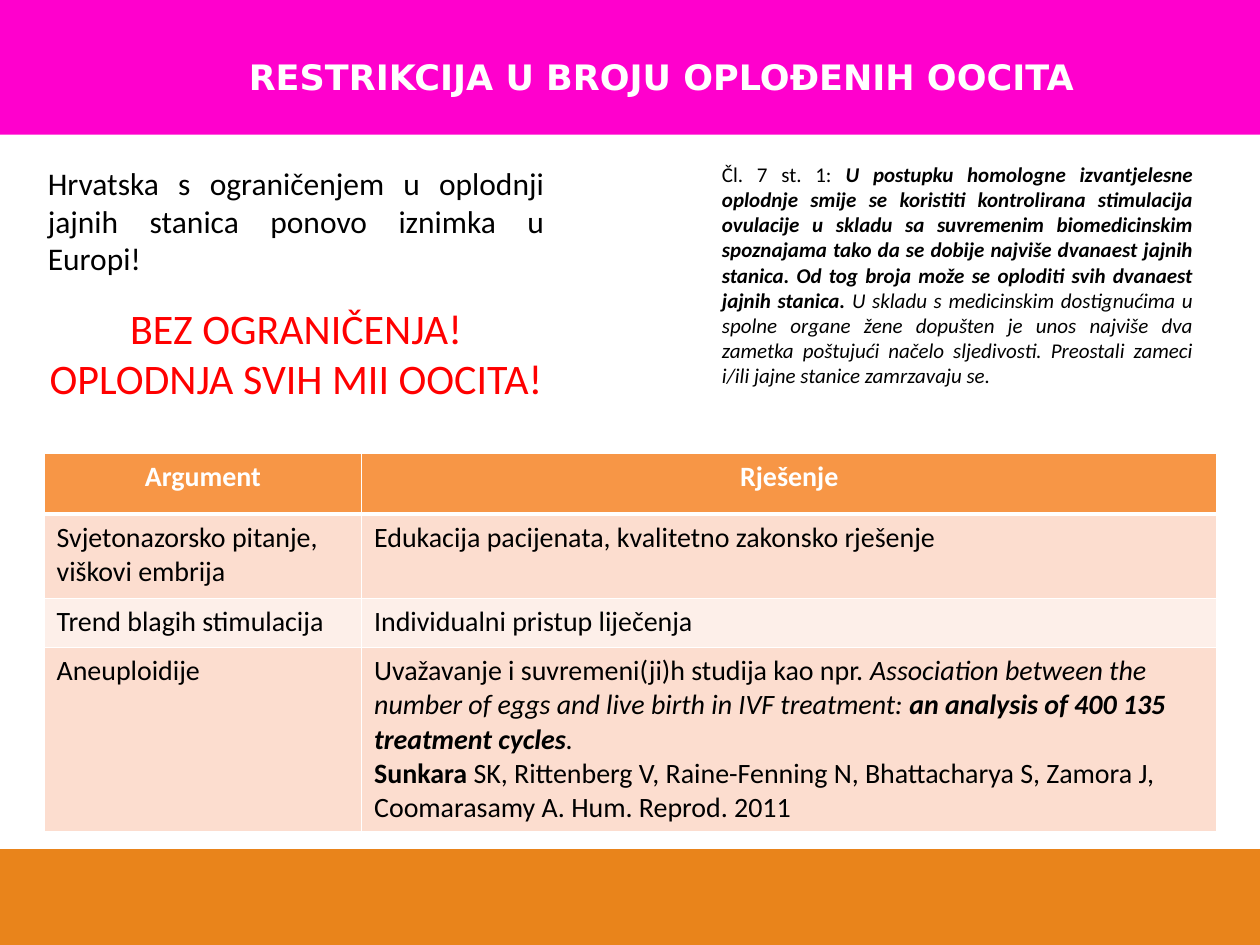
from lxml.etree import SubElement
from pptx import Presentation
from pptx.dml.color import RGBColor as RGB
from pptx.enum.shapes import MSO_SHAPE as SHAPE
from pptx.enum.text import MSO_ANCHOR as ANCHOR, MSO_AUTO_SIZE as FIT, PP_ALIGN as AL
from pptx.oxml import parse_xml
from pptx.oxml.ns import nsdecls, qn
from pptx.util import Inches, Pt

COLORS = {
    "magenta": "FF00CD", "orange": "E9841B", "header": "F79646",
    "odd": "FCDDCF", "even": "FDEFE9",
    "white": "FFFFFF", "black": "000000", "red": "FF0000",
}

prs = Presentation()
prs.slide_width, prs.slide_height = Inches(10), Inches(7.5)
X, Y = prs.slide_width / 100, prs.slide_height / 100
s = prs.slides.add_slide(prs.slide_layouts[3])


def box(left, top, width, height):
    return int(left * X), int(top * Y), int(width * X), int(height * Y)


def write(p, text, size=16, color="black", font="Calibri", bold=False, italic=False):
    r = p.add_run()
    r.text = text
    r.font.size, r.font.name = Pt(size), font
    r.font.bold, r.font.italic = bold, italic
    r.font.color.rgb = RGB.from_string(COLORS[color])


for i, (top, height, color) in enumerate([(0, 14.27, "magenta"), (89.87, 10.13, "orange")]):
    sp = s.shapes.add_shape(SHAPE.RECTANGLE, *box(0, top, 100, height))
    sp.shadow.inherit = False
    sp.fill.solid()
    sp.fill.fore_color.rgb = RGB.from_string(COLORS[color])
    sp.line.fill.background()
    s.shapes._spTree.insert(2 + i, sp._element)

title, left, right = s.placeholders
frames = [
    (title, (7.5, 0.67, 90, 13.33)),
    (left, (2.8, 16.67, 41.4, 35.07)),
    (right, (56.3, 16.4, 39.4, 25.6)),
]
for sp, place in frames:
    sp.left, sp.top, sp.width, sp.height = box(*place)
    sp.text_frame.word_wrap = True
    sp.text_frame.auto_size = FIT.NONE

tf = title.text_frame
tf.vertical_anchor = ANCHOR.MIDDLE
tf.margin_top = int(2.27 * Y)
tf.paragraphs[0].alignment = AL.CENTER
write(tf.paragraphs[0], "RESTRIKCIJA U BROJU OPLOĐENIH OOCITA",
      size=20, color="white", font="DejaVu Sans", bold=True)

bodies = [
    (left, [
        (AL.JUSTIFY, 1, [("Hrvatska s ograničenjem u oplodnji jajnih stanica ponovo iznimka u Europi!",
                          dict(size=18))]),
        (AL.CENTER, 1.5, [("BEZ OGRANIČENJA!", dict(size=24, color="red"))]),
        (AL.CENTER, 1, [("OPLODNJA SVIH MII OOCITA!", dict(size=24, color="red"))]),
    ]),
    (right, [
        (AL.JUSTIFY, 1, [
            ("Čl. 7 st. 1: ", dict(size=12)),
            ("U postupku homologne izvantjelesne oplodnje smije se koristiti kontrolirana "
             "stimulacija ovulacije u skladu sa suvremenim biomedicinskim spoznajama tako da se "
             "dobije najviše dvanaest jajnih stanica. Od tog broja može se oploditi svih dvanaest "
             "jajnih stanica. ", dict(size=12, bold=True, italic=True)),
            ("U skladu s medicinskim dostignućima u spolne organe žene dopušten je unos najviše "
             "dva zametka poštujući načelo sljedivosti. Preostali zameci i/ili jajne stanice "
             "zamrzavaju se.", dict(size=12, italic=True)),
        ]),
    ]),
]
for sp, paragraphs in bodies:
    tf = sp.text_frame
    for i, (align, spacing, runs) in enumerate(paragraphs):
        p = tf.add_paragraph() if i else tf.paragraphs[0]
        p.alignment, p.line_spacing, p.space_before = align, spacing, Pt(0)
        pPr = p._p.get_or_add_pPr()
        pPr.set("marL", "0")
        pPr.set("indent", "0")
        SubElement(pPr, qn("a:buNone"))
        for text, fmt in runs:
            write(p, text, **fmt)

head = dict(color="white", bold=True)
rows = [
    (6.4, "header", [[[("Argument", head)]], [[("Rješenje", head)]]]),
    (8.93, "odd", [[[("Svjetonazorsko pitanje, viškovi embrija", {})]],
                   [[("Edukacija pacijenata, kvalitetno zakonsko rješenje", {})]]]),
    (5.2, "even", [[[("Trend blagih stimulacija", {})]],
                   [[("Individualni pristup liječenja", {})]]]),
    (18.27, "odd", [[[("Aneuploidije", {})]], [
        [("Uvažavanje i suvremeni(ji)h studija kao npr. ", {}),
         ("Association between the number of eggs and live birth in IVF treatment: ",
          dict(italic=True)),
         ("an analysis of 400 135 treatment cycles", dict(bold=True, italic=True)),
         (".", dict(italic=True))],
        [("Sunkara", dict(bold=True)),
         (" SK, Rittenberg V, Raine-Fenning N, Bhattacharya S, Zamora J, Coomarasamy A. "
          "Hum. Reprod. 2011", {})],
    ]]),
]
table = s.shapes.add_table(len(rows), 2, *box(3.5, 48, 93.1, 38.8)).table
for col, width in zip(table.columns, (25.2, 67.9)):
    col.width = int(width * X)
for i, (height, fill, cells) in enumerate(rows):
    table.rows[i].height = int(height * Y)
    for j, paragraphs in enumerate(cells):
        cell = table.cell(i, j)
        cell.fill.solid()
        cell.fill.fore_color.rgb = RGB.from_string(COLORS[fill])
        for k, runs in enumerate(paragraphs):
            p = cell.text_frame.add_paragraph() if k else cell.text_frame.paragraphs[0]
            p.alignment = AL.LEFT if i else AL.CENTER
            for text, fmt in runs:
                write(p, text, **fmt)
        for n, side in enumerate("LRTB"):
            thick = (i, side) in [(0, "B"), (1, "T")]
            cell._tc.get_or_add_tcPr().insert(n, parse_xml(
                f'<a:ln{side} {nsdecls("a")} w="{Pt(3 if thick else 1)}"><a:solidFill>'
                f'<a:srgbClr val="{COLORS["white"]}"/></a:solidFill></a:ln{side}>'))

prs.save("out.pptx")
